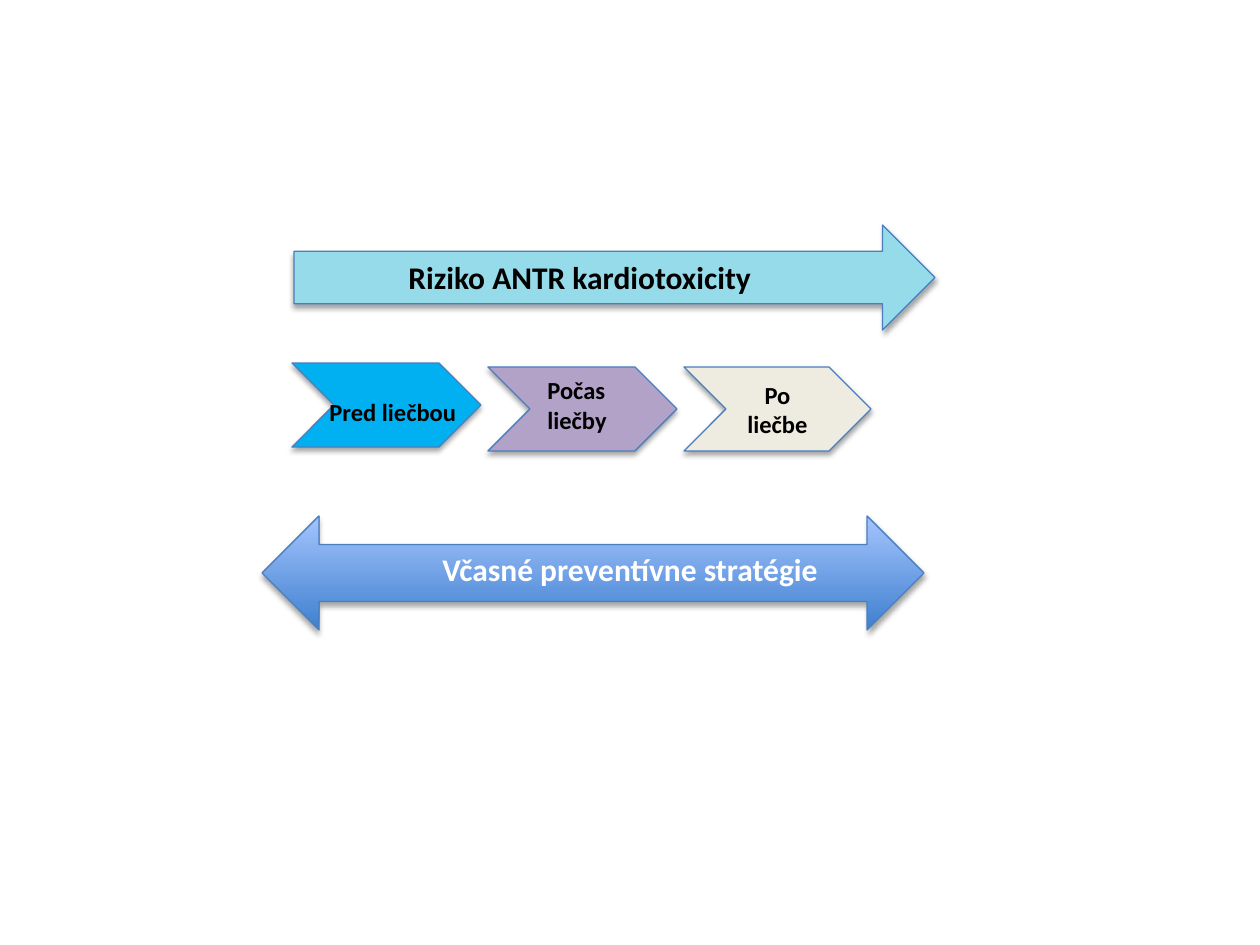
from dataclasses import dataclass

from lxml.etree import SubElement
from pptx import Presentation
from pptx.dml.color import RGBColor
from pptx.enum.shapes import MSO_SHAPE
from pptx.enum.text import MSO_ANCHOR, PP_ALIGN
from pptx.oxml.ns import qn
from pptx.util import Emu, Pt

BLACK = RGBColor(0x00, 0x00, 0x00)
WHITE = RGBColor(0xFF, 0xFF, 0xFF)
OUTLINE = RGBColor(0x4B, 0x7E, 0xBC)
SKY = RGBColor(0x00, 0xB0, 0xF0)
LAVENDER = RGBColor(0xB3, 0xA2, 0xC7)
CREAM = RGBColor(0xEE, 0xEC, 0xE1)
AQUA = RGBColor(0x95, 0xDB, 0xE9)
DEEP_BLUE = RGBColor(0x3F, 0x80, 0xCE)
PALE_BLUE = RGBColor(0xA4, 0xC4, 0xFF)


@dataclass(frozen=True)
class Arrow:
    preset: MSO_SHAPE
    left: int
    top: int
    width: int
    height: int
    fills: tuple[RGBColor, ...]
    text: str = ""


@dataclass(frozen=True)
class Label:
    text: str
    left: int
    top: int
    width: int
    height: int
    size: int
    color: RGBColor = BLACK


ARROWS = (
    Arrow(MSO_SHAPE.CHEVRON, 292, 363, 189, 84, (SKY,)),
    Arrow(MSO_SHAPE.CHEVRON, 488, 367, 189, 84, (LAVENDER,)),
    Arrow(MSO_SHAPE.CHEVRON, 684, 367, 187, 84, (CREAM,), "Po liečbe"),
    Arrow(MSO_SHAPE.RIGHT_ARROW, 294, 225, 641, 105, (AQUA,)),
    Arrow(MSO_SHAPE.LEFT_RIGHT_ARROW, 262, 516, 662, 114, (DEEP_BLUE, PALE_BLUE)),
)

LABELS = (
    Label("Pred liečbou", 317, 391, 155, 43, 14),
    Label("Včasné preventívne stratégie", 430, 544, 536, 50, 18, WHITE),
    Label("Riziko ANTR kardiotoxicity", 396, 252, 380, 50, 18),
    Label("Počas liečby", 535, 369, 116, 72, 14),
)


def px(length: int) -> Emu:
    return Emu(round(length * 914400 / 126))


def add_span(para, text: str, size: int, color: RGBColor) -> None:
    span = para.add_run()
    span.text = text
    span.font.name = "Calibri"
    span.font.size = Pt(size)
    span.font.bold = True
    span.font.color.rgb = color


def add_shadow(shape) -> None:
    shape.shadow.inherit = False
    effects = shape.element.spPr.find(qn("a:effectLst"))
    shadow = SubElement(
        effects,
        qn("a:outerShdw"),
        blurRad=str(Pt(3.1)),
        dist=str(Pt(1.8)),
        dir="5400000",
        rotWithShape="0",
    )
    color = SubElement(shadow, qn("a:srgbClr"), val=str(BLACK))
    SubElement(color, qn("a:alpha"), val="35000")


def add_arrow(page, arrow: Arrow) -> None:
    shape = page.shapes.add_shape(
        arrow.preset, px(arrow.left), px(arrow.top), px(arrow.width), px(arrow.height)
    )
    if len(arrow.fills) == 1:
        shape.fill.solid()
        shape.fill.fore_color.rgb = arrow.fills[0]
    else:
        shape.fill.gradient()
        shape.fill.gradient_angle = 90
        for stop, position, color in zip(shape.fill.gradient_stops, (0, 1), arrow.fills):
            stop.position = position
            stop.color.rgb = color
    shape.line.color.rgb = OUTLINE
    shape.line.width = Pt(0.75)
    add_shadow(shape)
    if arrow.text:
        frame = shape.text_frame
        frame.word_wrap = True
        frame.vertical_anchor = MSO_ANCHOR.MIDDLE
        para = frame.paragraphs[0]
        para.alignment = PP_ALIGN.CENTER
        add_span(para, arrow.text, 14, BLACK)


def add_label(page, label: Label) -> None:
    box = page.shapes.add_textbox(
        px(label.left), px(label.top), px(label.width), px(label.height)
    )
    box.text_frame.word_wrap = True
    add_span(box.text_frame.paragraphs[0], label.text, label.size, label.color)


def main() -> None:
    deck = Presentation()
    deck.slide_width = px(1260)
    deck.slide_height = px(945)
    page = deck.slides.add_slide(deck.slide_layouts[6])
    for arrow in ARROWS:
        add_arrow(page, arrow)
    for label in LABELS:
        add_label(page, label)
    deck.save("out.pptx")


if __name__ == "__main__":
    main()
